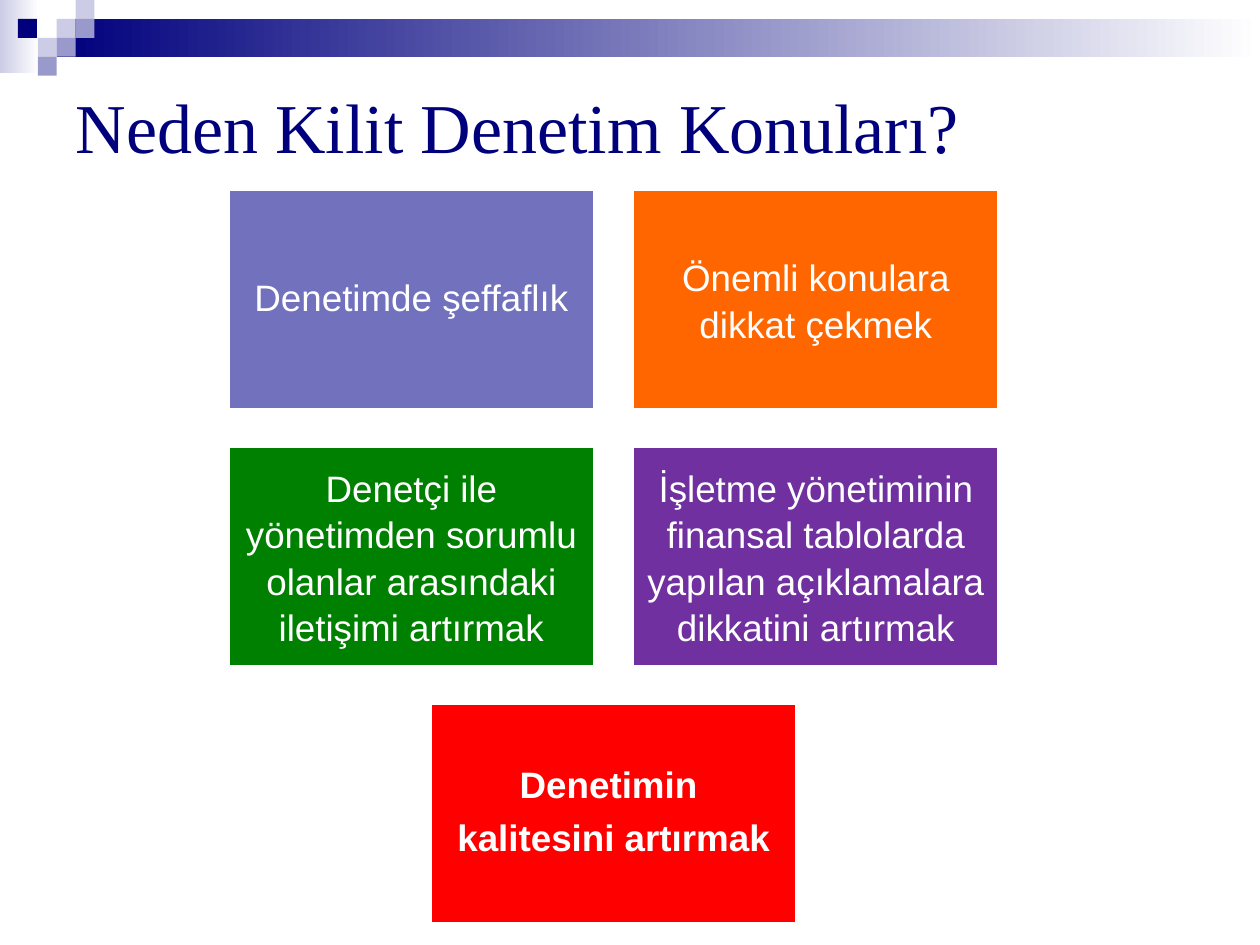
import pptx
import pptx.util
import pptx.dml.color
import pptx.enum.shapes
import pptx.enum.text

Inches = pptx.util.Inches
Pt = pptx.util.Pt
RGBColor = pptx.dml.color.RGBColor
Align = pptx.enum.text.PP_ALIGN
Anchor = pptx.enum.text.MSO_ANCHOR

NAVY = RGBColor(0x00, 0x00, 0x7D)
LAVENDER = RGBColor(0xCC, 0xCC, 0xE6)
PERIWINKLE = RGBColor(0x99, 0x99, 0xCC)
WHITE = RGBColor(0xFF, 0xFF, 0xFF)
BLUE = RGBColor(0x71, 0x71, 0xBD)
ORANGE = RGBColor(0xFF, 0x66, 0x00)
GREEN = RGBColor(0x00, 0x80, 0x00)
PURPLE = RGBColor(0x70, 0x30, 0xA0)
RED = RGBColor(0xFF, 0x00, 0x00)

TITLE = "Neden Kilit Denetim Konuları?"
REASON_ROWS = [
    [
        (["Denetimde şeffaflık"], BLUE, 0.9, False),
        (["Önemli konulara dikkat çekmek"], ORANGE, 1.05, False),
    ],
    [
        (["Denetçi ile yönetimden sorumlu olanlar arasındaki iletişimi artırmak"],
         GREEN, 1.05, False),
        (["İşletme yönetiminin finansal tablolarda yapılan açıklamalara dikkatini artırmak"],
         PURPLE, 1.05, False),
    ],
    [(["Denetimin ", "kalitesini artırmak"], RED, 0.9, True)],
]
BANDS = [((0, 0, 0.31, 0.58), LAVENDER), ((0.45, 0.15, 9.55, 0.3), NAVY)]
TILE = 0.15
TILES = [
    (3, 1, LAVENDER), (4, 0, LAVENDER), (4, 1, PERIWINKLE), (2, 2, LAVENDER),
    (0.95, 1, NAVY), (3, 2, PERIWINKLE), (2, 3, PERIWINKLE),
]

CARD_WIDTH, CARD_HEIGHT, GAP = 2.91, 1.75, 0.29
COLUMN_GAP = 0.3
GRID_CENTER, GRID_TOP = 4.87, 1.5
CARD_FRAME = {
    "word_wrap": True, "vertical_anchor": Anchor.MIDDLE,
    "margin_left": Inches(0.09), "margin_right": Inches(0.09),
    "margin_top": Inches(0.09), "margin_bottom": Inches(0.09),
}


def assign(target, values):
    for name, value in values.items():
        setattr(target, name, value)


def style_font(font, family, size, color, bold=False):
    assign(font, {"name": family, "size": Pt(size), "bold": bold})
    font.color.rgb = color


def add_rectangle(page, place, color):
    shape = page.shapes.add_shape(
        pptx.enum.shapes.MSO_SHAPE.RECTANGLE, *map(Inches, place))
    shape.shadow.inherit = False
    shape.fill.solid()
    shape.fill.fore_color.rgb = color
    shape.line.fill.background()
    return shape


def add_header(page):
    for place, color in BANDS:
        band = add_rectangle(page, place, color)
        band.fill.gradient()
        band.fill.gradient_angle = 0
        for stop, shade in zip(band.fill.gradient_stops, (color, WHITE)):
            stop.color.rgb = shade
    for column, row, color in TILES:
        add_rectangle(page, (column * TILE, row * TILE, TILE, TILE), color)


def add_title(page):
    title = page.shapes.title
    assign(title, {"left": Inches(0.5), "top": Inches(0.5),
                   "width": Inches(9), "height": Inches(1)})
    frame = title.text_frame
    frame.text = TITLE
    frame.vertical_anchor = Anchor.MIDDLE
    para = frame.paragraphs[0]
    para.alignment = Align.LEFT
    style_font(para.runs[0].font, "Times New Roman", 40, NAVY)


def add_card(page, left, top, lines, color, spacing, bold):
    card = add_rectangle(page, (left, top, CARD_WIDTH, CARD_HEIGHT), color)
    card.line.color.rgb = WHITE
    card.line.width = Pt(2)
    frame = card.text_frame
    assign(frame, CARD_FRAME)
    frame.text = "\n".join(lines)
    for para in frame.paragraphs:
        assign(para, {"alignment": Align.CENTER, "line_spacing": spacing,
                      "space_after": Pt(7.35)})
        style_font(para.runs[0].font, "Arial", 21, WHITE, bold)


def main():
    deck = pptx.Presentation()
    deck.slide_width, deck.slide_height = Inches(10), Inches(7.5)
    page = deck.slides.add_slide(deck.slide_layouts[5])
    add_header(page)
    add_title(page)
    for row, cards in enumerate(REASON_ROWS):
        row_width = len(cards) * (CARD_WIDTH + COLUMN_GAP) - COLUMN_GAP
        top = GRID_TOP + row * (CARD_HEIGHT + GAP)
        for column, card in enumerate(cards):
            left = GRID_CENTER - row_width / 2 + column * (CARD_WIDTH + COLUMN_GAP)
            add_card(page, left, top, *card)
    deck.save("out.pptx")


if __name__ == "__main__":
    main()
